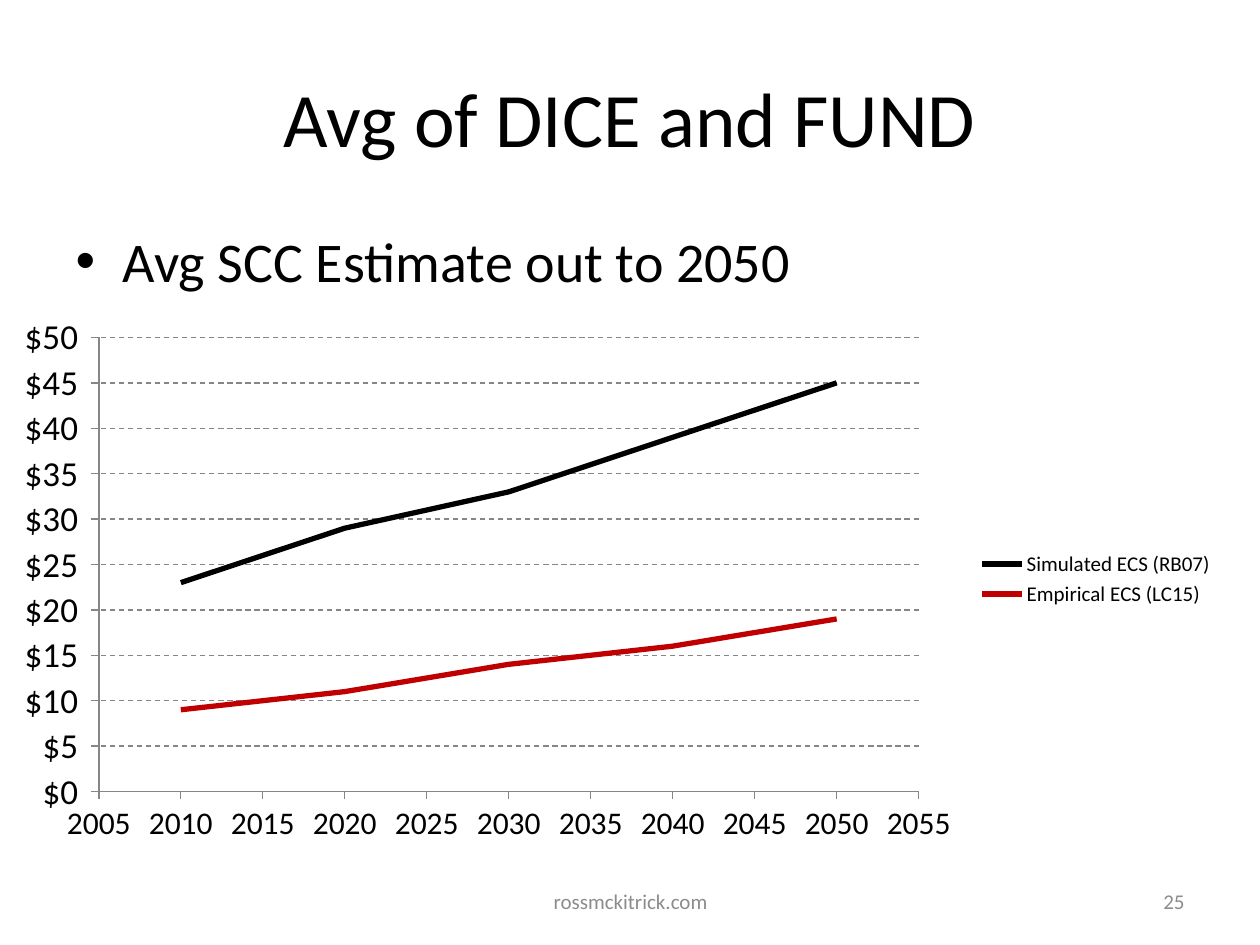
import pptx
import pptx.chart.data
import pptx.dml.color
import pptx.enum.chart
import pptx.enum.dml
import pptx.enum.text
import pptx.util

Inches, Pt = pptx.util.Inches, pptx.util.Pt
ALIGN = pptx.enum.text.PP_ALIGN
ANCHOR = pptx.enum.text.MSO_ANCHOR
TICK = pptx.enum.chart.XL_TICK_MARK

COLORS = {"text": "000000", "muted": "8C8C8C", "rule": "868686",
          "simulated": "000000", "empirical": "C00000"}
HEADING = ("Avg of DICE and FUND", (0.5, 0.3, 9, 1.25), 44, ALIGN.CENTER, ANCHOR.MIDDLE)
POINT = ("Avg SCC Estimate out to 2050", (0.5, 1.75, 9, 4.95), 32, ALIGN.LEFT, ANCHOR.TOP)
FOOTERS = [
    ("rossmckitrick.com", (3.42, 6.95, 3.17, 0.4), 12, ALIGN.CENTER, ANCHOR.MIDDLE),
    ("25", (7.17, 6.95, 2.33, 0.4), 12, ALIGN.RIGHT, ANCHOR.MIDDLE),
]
YEARS = [2010, 2020, 2030, 2040, 2050]
ESTIMATES = [
    ("Simulated ECS (RB07)", "simulated", [23, 29, 33, 39, 45]),
    ("Empirical ECS (LC15)", "empirical", [9, 11, 14, 16, 19]),
]
CHART_BOX = (0, 2.42, 9.74, 4.35)
YEAR_SCALE = {"minimum_scale": 2005, "maximum_scale": 2055, "major_unit": 5,
              "has_major_gridlines": False}
DOLLAR_SCALE = {"minimum_scale": 0, "maximum_scale": 50, "major_unit": 5,
                "has_major_gridlines": True}
TICKS = {"major_tick_mark": TICK.OUTSIDE, "minor_tick_mark": TICK.NONE, "has_title": False}


def rgb(name):
    return pptx.dml.color.RGBColor.from_string(COLORS[name])


def assign(target, values):
    for key, value in values.items():
        setattr(target, key, value)


def style_font(font, size, color="text"):
    assign(font, {"name": "Calibri", "size": Pt(size)})
    font.color.rgb = rgb(color)


def style_line(line, color, width):
    line.color.rgb = rgb(color)
    line.width = Pt(width)


def write(holder, content, color="text"):
    words, box, size, align, anchor = content
    assign(holder, dict(zip(("left", "top", "width", "height"), map(Inches, box))))
    frame = holder.text_frame
    frame.text = words
    assign(frame, {"word_wrap": True, "vertical_anchor": anchor})
    frame.paragraphs[0].alignment = align
    style_font(frame.paragraphs[0].runs[0].font, size, color)


def add_estimates(slide):
    data = pptx.chart.data.XyChartData()
    for label, _, costs in ESTIMATES:
        series = data.add_series(label)
        for year, cost in zip(YEARS, costs):
            series.add_data_point(year, cost)
    chart = slide.shapes.add_chart(
        pptx.enum.chart.XL_CHART_TYPE.XY_SCATTER_SMOOTH_NO_MARKERS,
        *map(Inches, CHART_BOX), data).chart
    style_font(chart.font, 10)
    assign(chart, {"has_title": False, "has_legend": True})
    assign(chart.legend, {"position": pptx.enum.chart.XL_LEGEND_POSITION.RIGHT,
                          "include_in_layout": False})
    style_font(chart.legend.font, 12)

    for axis, scale, size, number_format in (
        (chart.category_axis, YEAR_SCALE, 18, "General"),
        (chart.value_axis, DOLLAR_SCALE, 20, r'"$"#,##0_);[Red]\("$"#,##0\)'),
    ):
        assign(axis, {**scale, **TICKS})
        assign(axis.tick_labels, {"number_format": number_format,
                                  "number_format_is_linked": False})
        style_font(axis.tick_labels.font, size)
        style_line(axis.format.line, "rule", 0.75)
    grid = chart.value_axis.major_gridlines.format.line
    style_line(grid, "rule", 0.75)
    grid.dash_style = pptx.enum.dml.MSO_LINE.DASH

    for series, (_, color, _) in zip(chart.plots[0].series, ESTIMATES):
        series.smooth = True
        series.marker.style = pptx.enum.chart.XL_MARKER_STYLE.NONE
        style_line(series.format.line, color, 3)


def main():
    deck = pptx.Presentation()
    assign(deck, {"slide_width": Inches(10), "slide_height": Inches(7.5)})
    slide = deck.slides.add_slide(deck.slide_layouts[1])
    write(slide.shapes.title, HEADING)
    write(slide.placeholders[1], POINT)
    for footer in FOOTERS:
        write(slide.shapes.add_textbox(0, 0, 0, 0), footer, "muted")
    add_estimates(slide)
    deck.save("out.pptx")


if __name__ == "__main__":
    main()
